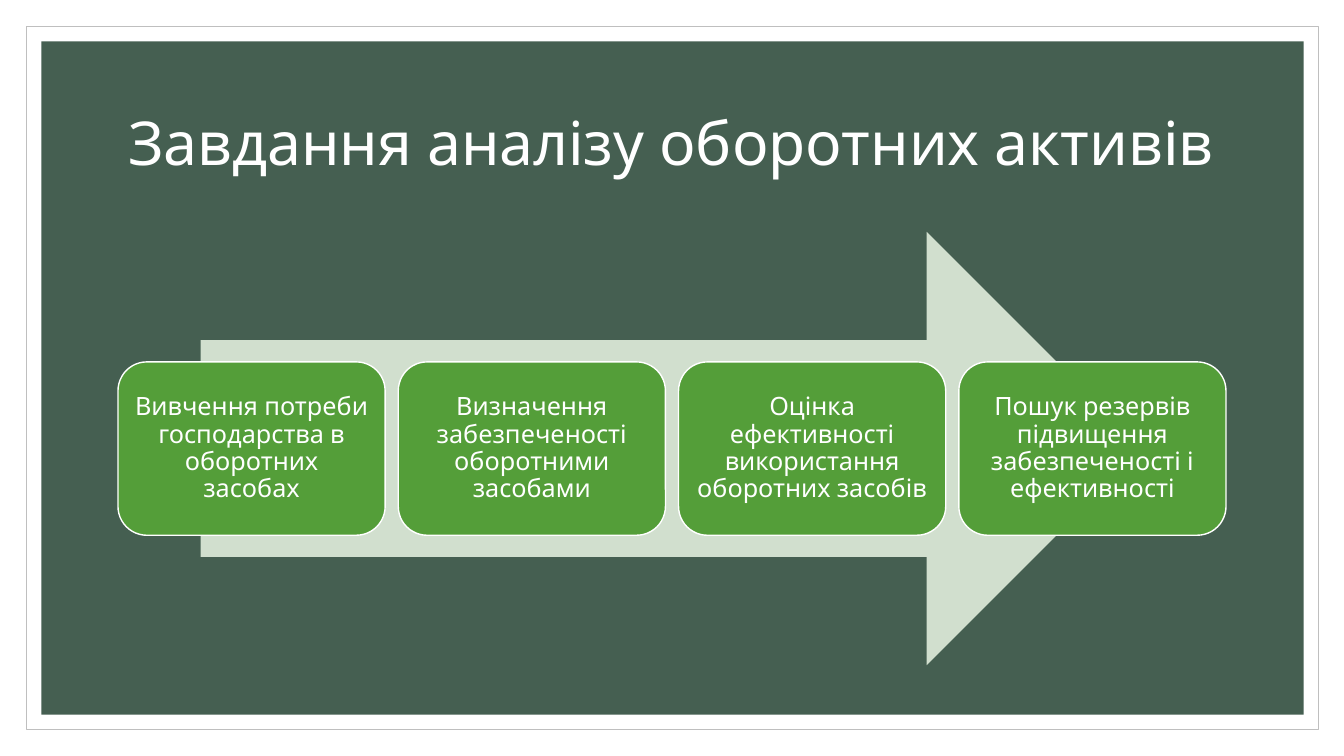
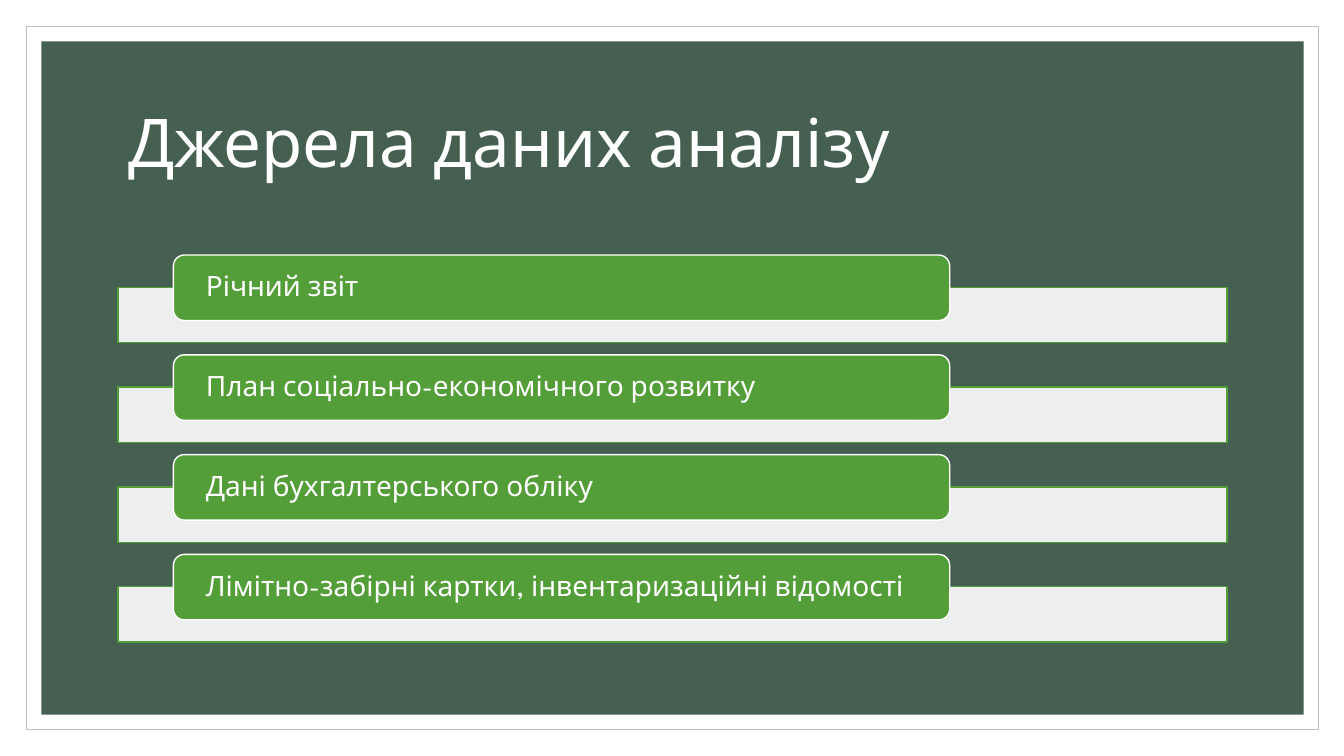
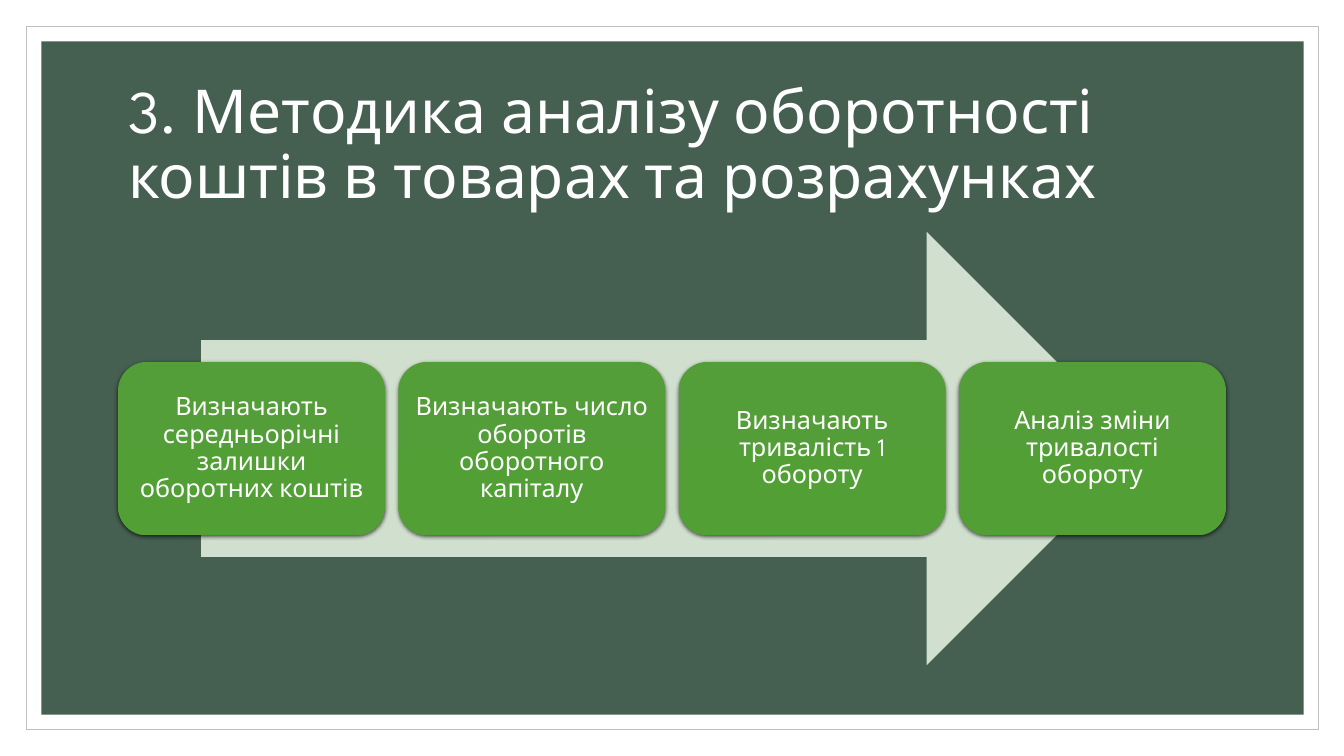
"""Three slides on the analysis of current assets: two process arrows and a list of sources."""
from dataclasses import dataclass

from lxml.etree import SubElement
from pptx import Presentation
from pptx.dml.color import RGBColor
from pptx.enum.shapes import MSO_SHAPE
from pptx.enum.text import MSO_ANCHOR, MSO_AUTO_SIZE, PP_ALIGN
from pptx.oxml.ns import qn
from pptx.util import Pt

PX = 9144
FONT = "League Spartan"
WHITE, GREY, DARK = "FFFFFF", "BFBFBF", "455F51"
GREEN, GREEN_END = "549E39", "529F36"
PALE, PALE_END = "D1DFCE", "CFDDCC"
LEFT, WIDTH = 117, 1100
STEP_PITCH, SOURCE_PITCH = 278, 99


@dataclass(frozen=True)
class Box:
    """A rectangle in px, 100 to the inch."""
    x: int
    y: int
    w: int
    h: int

    def emu(self) -> tuple[int, int, int, int]:
        return self.x * PX, self.y * PX, self.w * PX, self.h * PX


@dataclass(frozen=True)
class Process:
    """A slide with steps laid over a wide arrow."""
    title: str
    steps: tuple[str, ...]
    shaded: bool = False


@dataclass(frozen=True)
class Sources:
    """A slide with labels laid over wide bars."""
    title: str
    items: tuple[str, ...]


TASKS = Process("Завдання аналізу оборотних активів", (
    "Вивчення потреби господарства в оборотних засобах",
    "Визначення забезпеченості оборотними засобами",
    "Оцінка ефективності використання оборотних засобів",
    "Пошук резервів підвищення забезпеченості і ефективності",
))
DATA = Sources("Джерела даних аналізу", (
    "Річний звіт",
    "План соціально-економічного розвитку",
    "Дані бухгалтерського обліку",
    "Лімітно-забірні картки, інвентаризаційні відомості",
))
METHOD = Process("3. Методика аналізу оборотності коштів в товарах та розрахунках", (
    "Визначають середньорічні залишки оборотних коштів",
    "Визначають число оборотів оборотного капіталу",
    "Визначають тривалість 1 обороту",
    "Аналіз зміни тривалості обороту",
), shaded=True)


def rgb(color: str) -> RGBColor:
    """Turn a hex string into a colour."""
    return RGBColor.from_string(color)


def write(shape, text: str, *, size: float, align=PP_ALIGN.LEFT, inset=(10, 5)) -> None:
    """Fill a shape with one white, vertically centred paragraph."""
    tf = shape.text_frame
    tf.word_wrap = True
    tf.auto_size = MSO_AUTO_SIZE.NONE
    tf.vertical_anchor = MSO_ANCHOR.MIDDLE
    tf.margin_left = tf.margin_right = inset[0] * PX
    tf.margin_top = tf.margin_bottom = inset[1] * PX
    p = tf.paragraphs[0]
    p.alignment = align
    p.line_spacing = 0.9
    r = p.add_run()
    r.text = text
    r.font.name, r.font.size = FONT, Pt(size)
    r.font.color.rgb = rgb(WHITE)


def draw(s, kind, box: Box, fill: str, *, fill_end="", alpha=100, line="", width=1.0, shadow=False):
    """Add a preset shape with a plain, translucent or vertical gradient fill."""
    sp = s.shapes.add_shape(kind, *box.emu())
    sp.shadow.inherit = False
    if fill_end:
        sp.fill.gradient()
        sp.fill.gradient_angle = 270
        for stop, color in zip(sp.fill.gradient_stops, (fill, fill_end)):
            stop.color.rgb = rgb(color)
    else:
        sp.fill.solid()
        sp.fill.fore_color.rgb = rgb(fill)
    if alpha < 100:
        color = sp.element.spPr.find(qn("a:solidFill")).find(qn("a:srgbClr"))
        SubElement(color, qn("a:alpha"), val=str(alpha * 1000))
    if line:
        sp.line.color.rgb = rgb(line)
        sp.line.width = Pt(width)
    else:
        sp.line.fill.background()
    if shadow:
        effects = sp.element.spPr.find(qn("a:effectLst"))
        outer = SubElement(effects, qn("a:outerShdw"), blurRad=str(Pt(3)), dist=str(Pt(1)),
                           dir="5400000", algn="ctr", rotWithShape="0")
        color = SubElement(outer, qn("a:srgbClr"), val="000000")
        SubElement(color, qn("a:alpha"), val="63000")
    return sp


def frame_layout(s) -> None:
    """Draw the shared frame and panel, and move them behind everything on the layout."""
    frame = draw(s, MSO_SHAPE.RECTANGLE, Box(26, 26, 1282, 698), WHITE, line=GREY, width=0.5)
    panel = draw(s, MSO_SHAPE.RECTANGLE, Box(41, 41, 1252, 668), DARK)
    for i, sp in enumerate((frame, panel)):
        sp.element.nvSpPr.cNvPr.set("id", str(101 + i))
        s.slide_layout.shapes.element.insert(2 + i, sp.element)


def new_slide(prs, title: str, size: float):
    """Add a title-only slide with a formatted title."""
    s = prs.slides.add_slide(prs.slide_layouts[5])
    sp = s.shapes.title
    sp.left, sp.top, sp.width, sp.height = Box(LEFT, 70, WIDTH, 150).emu()
    write(sp, title, size=size)
    return s


def process_slide(prs, process: Process):
    """Build a slide with an arrow and its row of steps."""
    s = new_slide(prs, process.title, 43.2)
    shaded = process.shaded
    draw(s, MSO_SHAPE.RIGHT_ARROW, Box(199, 230, 935, 430), PALE,
         fill_end=PALE_END if shaded else "")
    for i, text in enumerate(process.steps):
        step = draw(s, MSO_SHAPE.ROUNDED_RECTANGLE, Box(LEFT + i * STEP_PITCH, 359, 265, 172), GREEN,
                    fill_end=GREEN_END if shaded else "", line="" if shaded else WHITE, shadow=shaded)
        write(step, text, size=18, align=PP_ALIGN.CENTER, inset=(7, 7))
    return s


def sources_slide(prs, sources: Sources):
    """Build a slide with a column of labelled bars."""
    s = new_slide(prs, sources.title, 48)
    for i, text in enumerate(sources.items):
        y = 253 + i * SOURCE_PITCH
        draw(s, MSO_SHAPE.RECTANGLE, Box(LEFT, y + 32, WIDTH, 55), WHITE, alpha=90, line=GREEN)
        label = draw(s, MSO_SHAPE.ROUNDED_RECTANGLE, Box(172, y, 770, 65), GREEN, line=WHITE)
        write(label, text, size=20, inset=(29, 0))
    return s


def main() -> None:
    """Build and save the presentation."""
    prs = Presentation()
    prs.slide_width, prs.slide_height = 1333 * PX, 750 * PX
    frame_layout(process_slide(prs, TASKS))
    sources_slide(prs, DATA)
    process_slide(prs, METHOD)
    prs.save("out.pptx")


if __name__ == "__main__":
    main()
